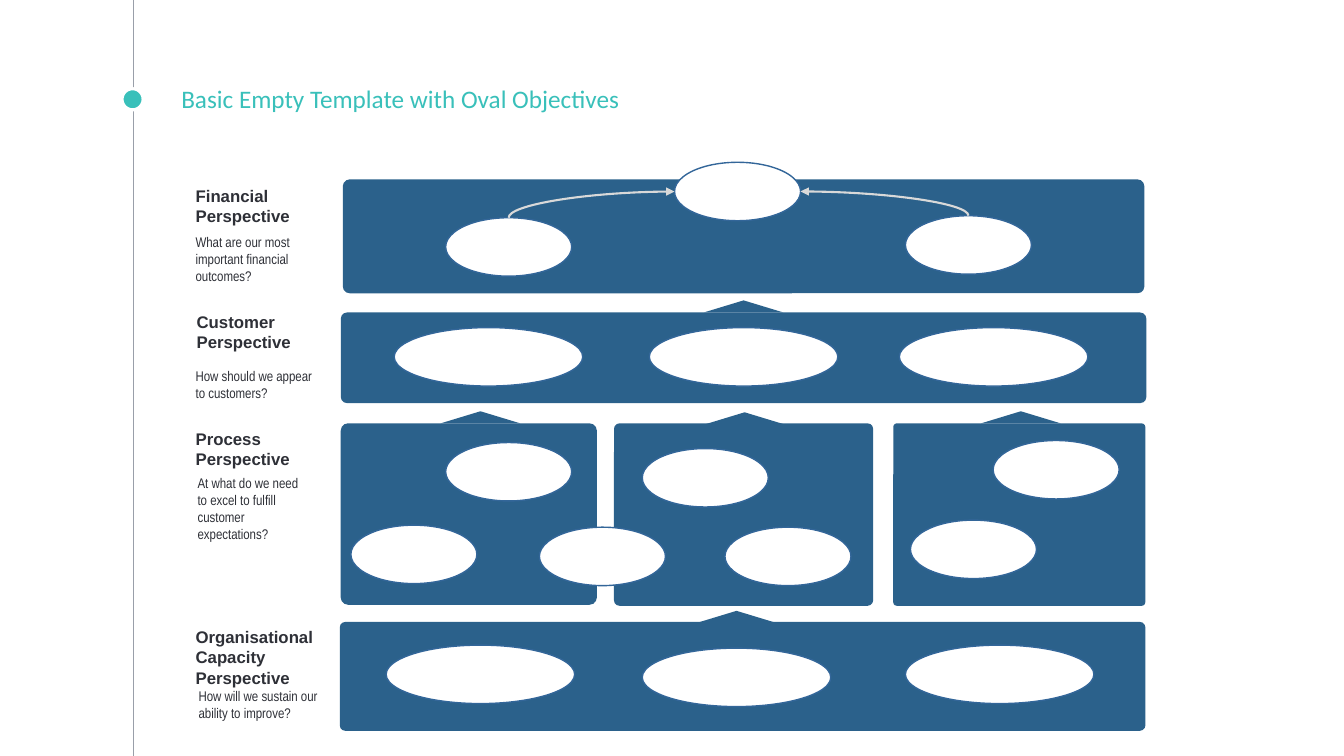
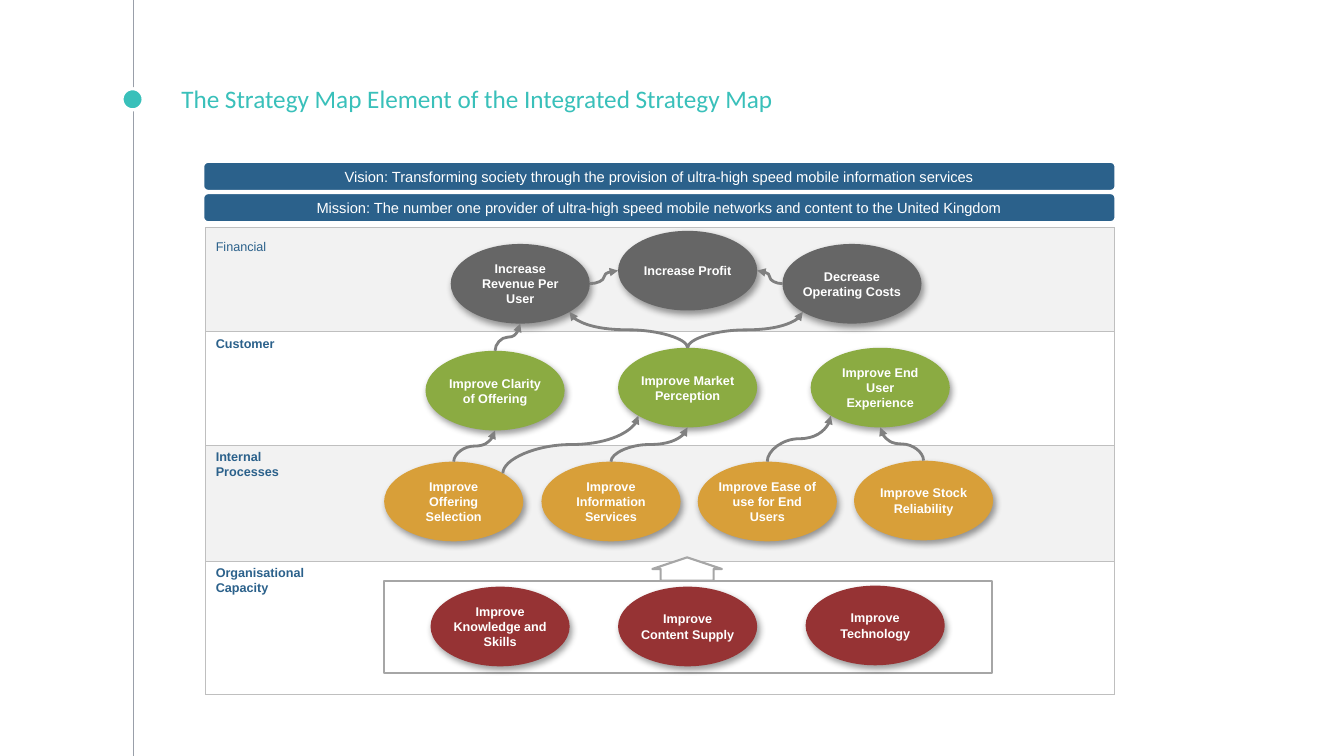
import math
from dataclasses import dataclass

from lxml import etree
from pptx import Presentation
from pptx import util as u
from pptx.dml.color import RGBColor
from pptx.enum import shapes, text
from pptx.oxml.ns import qn

Inches = u.Inches
PRESET = shapes.MSO_SHAPE
ALIGN = text.PP_ALIGN
ANCHOR = text.MSO_ANCHOR

# Connection sites of an oval, counted anticlockwise in steps of 45 degrees
TOP, LEFT, BOTTOM_LEFT, BOTTOM, BOTTOM_RIGHT, RIGHT, TOP_RIGHT = 0, 2, 3, 4, 5, 6, 7


@dataclass(frozen=True)
class Theme:
    accent: str = "39C0BA"
    rail: str = "999FA9"
    navy: str = "2B618B"
    oval_edge: str = "336699"
    ink: str = "2E3037"
    white: str = "FFFFFF"
    band: str = "F2F2F2"
    table_edge: str = "BFBFBF"
    frame: str = "A6A6A6"
    pale_arrow: str = "D9D9D9"
    arrow: str = "808080"
    shadow: str = "000000"
    financial: str = "666666"
    customer: str = "8BAB42"
    process: str = "D89F39"
    capacity: str = "963334"
    title_font: str = "Calibri"
    body_font: str = "Arial"
    narrow_font: str = "Arial Narrow"
    title_size: float = 18
    heading_size: float = 12
    banner_size: float = 10.5
    question_size: float = 10
    label_size: float = 9


THEME = Theme()


def rgb(color):
    return RGBColor.from_string(color)


def child(parent, tag, **attributes):
    return etree.SubElement(parent, qn(tag), **attributes)


def site_point(oval, site):
    """Position of a connection site on the edge of an oval."""
    angle = math.radians(45 * site)
    x = oval.left + oval.width / 2 * (1 - math.sin(angle))
    y = oval.top + oval.height / 2 * (1 - math.cos(angle))
    return round(x), round(y)


class SlideBuilder:
    def __init__(self, deck):
        self.deck = deck
        self.slide = None

    def new_slide(self, title):
        self.slide = self.deck.slides.add_slide(self.deck.slide_layouts[6])
        rail = self.slide.shapes.add_connector(
            shapes.MSO_CONNECTOR.STRAIGHT, Inches(1.32), 0, Inches(1.32), Inches(7.5))
        self.style_connector(rail, THEME.rail, 0.75)
        self.shape(PRESET.OVAL, (1.21, 0.88, 0.21, 0.21), THEME.accent, THEME.white, 2.25)
        self.text_box((1.7, 0.73, 10, 0.5), title, THEME.title_size, THEME.accent,
                      font=THEME.title_font, anchor=ANCHOR.BOTTOM, inset=0.1)

    def shape(self, preset, box, fill, edge=None, edge_width=1, adjustments=()):
        item = self.slide.shapes.add_shape(preset, *map(Inches, box))
        item.shadow.inherit = False
        item.fill.solid()
        item.fill.fore_color.rgb = rgb(fill)
        if edge:
            item.line.color.rgb = rgb(edge)
            item.line.width = u.Pt(edge_width)
        else:
            item.line.fill.background()
        for index, value in enumerate(adjustments):
            item.adjustments[index] = value
        return item

    def set_text(self, frame, words, size, color, font=THEME.body_font, bold=False,
                 align=ALIGN.LEFT):
        frame.word_wrap = True
        para = frame.paragraphs[0]
        para.text = words
        para.alignment = align
        para.font.name = font
        para.font.size = u.Pt(size)
        para.font.bold = bold
        para.font.color.rgb = rgb(color)

    def text_box(self, box, words, size, color, anchor=ANCHOR.TOP, inset=0.05, **style):
        frame = self.slide.shapes.add_textbox(*map(Inches, box)).text_frame
        frame.vertical_anchor = anchor
        self.set_insets(frame, inset)
        self.set_text(frame, words, size, color, **style)

    def set_insets(self, frame, inset):
        frame.margin_left = frame.margin_right = Inches(inset)
        frame.margin_top = frame.margin_bottom = Inches(inset)

    def panel(self, box, rounding):
        self.shape(PRESET.ROUNDED_RECTANGLE, box, THEME.navy, adjustments=[rounding])

    def pointer(self, left, top):
        self.shape(PRESET.ISOSCELES_TRIANGLE, (left, top, 0.79, 0.12), THEME.navy)

    def empty_oval(self, left, top, width=1.25):
        return self.shape(PRESET.OVAL, (left, top, width, 0.58), THEME.white, THEME.oval_edge)

    def banner(self, top, words):
        bar = self.shape(PRESET.ROUNDED_RECTANGLE, (2.02, top, 9.04, 0.28), THEME.navy,
                         THEME.white, adjustments=[0.15])
        bar.text_frame.vertical_anchor = ANCHOR.MIDDLE
        self.set_text(bar.text_frame, words, THEME.banner_size, THEME.white,
                      align=ALIGN.CENTER)

    def objective(self, left, top, words, fill):
        oval = self.shape(PRESET.OVAL, (left, top, 1.38, 0.79), fill)
        effects = oval._element.spPr.find(qn("a:effectLst"))
        shadow = child(effects, "a:outerShdw", blurRad=str(u.Pt(5)), dist=str(u.Pt(3)),
                       dir=str(60 * 60000), algn="tl", rotWithShape="0")
        color = child(shadow, "a:srgbClr", val=THEME.shadow)
        child(color, "a:alpha", val="40000")
        oval.text_frame.vertical_anchor = ANCHOR.MIDDLE
        self.set_insets(oval.text_frame, 0)
        self.set_text(oval.text_frame, words, THEME.label_size, THEME.white, bold=True,
                      align=ALIGN.CENTER)
        return oval

    def style_connector(self, connector, color, width, arrow=False):
        connector.line.color.rgb = rgb(color)
        connector.line.width = u.Pt(width)
        properties = connector._element.spPr
        if arrow:
            child(properties.find(qn("a:ln")), "a:tailEnd", type="triangle")
        child(properties, "a:effectLst")

    def curve(self, start, start_site, end, end_site, color, width, quarter=False):
        """Join two ovals; a curve that leaves sideways is not turned upward."""
        x1, y1 = site_point(start, start_site)
        x2, y2 = site_point(end, end_site)
        connector = self.slide.shapes.add_connector(
            shapes.MSO_CONNECTOR.CURVE, x1, y1, x2, y2)
        element = connector._element
        if start_site not in (LEFT, RIGHT):
            across, rise = abs(x2 - x1), abs(y2 - y1)
            connector.left = (x1 + x2 - rise) // 2
            connector.top = (y1 + y2 - across) // 2
            connector.width, connector.height = rise, across
            frame = element.spPr.find(qn("a:xfrm"))
            frame.set("rot", str(270 * 60000))
            frame.set("flipH", "0")
            frame.set("flipV", str(int(x2 < x1)))
        if quarter:
            element.spPr.find(qn("a:prstGeom")).set("prst", "curvedConnector2")
        joints = element.nvCxnSpPr.cNvCxnSpPr
        for tag, oval, site in (("a:stCxn", start, start_site), ("a:endCxn", end, end_site)):
            child(joints, tag, id=str(oval.shape_id), idx=str(site))
        self.style_connector(connector, color, width, arrow=True)

    def band_table(self, box, rows):
        """Rows are (height, label, fill, bold, top margin)."""
        table = self.slide.shapes.add_table(len(rows), 1, *map(Inches, box)).table
        table.first_row = table.horz_banding = False
        for index, (height, label, fill, bold, margin) in enumerate(rows):
            table.rows[index].height = Inches(height)
            cell = table.cell(index, 0)
            cell.margin_top = Inches(margin)
            properties = cell._tc.get_or_add_tcPr()
            for side in "LRTB":
                edge = child(properties, f"a:ln{side}", w=str(u.Pt(0.5)))
                child(child(edge, "a:solidFill"), "a:srgbClr", val=THEME.table_edge)
            cell.fill.solid()
            cell.fill.fore_color.rgb = rgb(fill)
            self.set_text(cell.text_frame, label, THEME.label_size, THEME.navy, bold=bold)


def build_empty_template(page):
    page.new_slide("Basic Empty Template with Oval Objectives")

    for left, top in ((9.73, 4.08), (6.99, 4.09), (4.37, 4.08), (6.98, 2.98), (6.91, 6.06)):
        page.pointer(left, top)
    for box, rounding in (
        ((3.4, 1.78, 7.95, 1.13), 0.06),
        ((3.38, 3.1, 7.99, 0.9), 0.07),
        ((3.38, 4.2, 2.54, 1.8), 0.04),
        ((6.09, 4.2, 2.57, 1.81), 0.03),
        ((8.86, 4.2, 2.5, 1.81), 0.02),
        ((3.37, 6.17, 7.99, 1.08), 0.05),
    ):
        page.panel(box, rounding)

    for heading_box, heading, question_box, question in (
        ((1.89, 1.79, 1.25, 0.5), "Financial Perspective",
         (1.89, 2.27, 1.43, 0.6), "What are our most important financial outcomes?"),
        ((1.9, 3.04, 1.19, 0.5), "Customer Perspective",
         (1.89, 3.6, 1.36, 0.43), "How should we appear to customers?"),
        ((1.89, 4.2, 1.24, 0.5), "Process Perspective",
         (1.91, 4.66, 1.16, 0.77),
         "At what do we need to excel to fulfill customer expectations?"),
        ((1.89, 6.17, 1.33, 0.7), "Organisational\nCapacity\nPerspective",
         (1.92, 6.77, 1.43, 0.43), "How will we sustain our ability to improve?"),
    ):
        page.text_box(heading_box, heading, THEME.heading_size, THEME.ink,
                      anchor=ANCHOR.MIDDLE, bold=True)
        page.text_box(question_box, question, THEME.question_size, THEME.ink,
                      font=THEME.narrow_font)

    goal = page.empty_oval(6.69, 1.61)
    left_driver = page.empty_oval(4.42, 2.16)
    right_driver = page.empty_oval(8.98, 2.14)
    for driver, goal_side in ((left_driver, LEFT), (right_driver, RIGHT)):
        page.curve(driver, TOP, goal, goal_side, THEME.pale_arrow, 1.5, quarter=True)

    process_ovals = ((4.42, 4.39), (3.48, 5.21), (5.35, 5.23), (6.37, 4.45),
                     (7.19, 5.23), (9.85, 4.37), (9.03, 5.16))
    for left, top in process_ovals:
        page.empty_oval(left, top)
    wide_ovals = ((3.91, 3.25), (6.44, 3.25), (8.92, 3.25),
                  (3.83, 6.4), (6.37, 6.43), (8.98, 6.4))
    for left, top in wide_ovals:
        page.empty_oval(left, top, width=1.87)


def build_strategy_map(page):
    page.new_slide("The Strategy Map Element of the Integrated Strategy Map")
    page.banner(1.61, "Vision: Transforming society through the provision of "
                      "ultra-high speed mobile information services")
    page.banner(1.92, "Mission: The number one provider of ultra-high speed mobile "
                      "networks and content to the United Kingdom")
    page.band_table((2.04, 2.26, 9.01, 4.63), (
        (1.03, "Financial", THEME.band, False, 0.12),
        (1.13, "Customer", THEME.white, True, 0.05),
        (1.15, "Internal\nProcesses", THEME.band, True, 0.05),
        (1.32, "Organisational\nCapacity", THEME.white, True, 0.05),
    ))
    page.shape(PRESET.RECTANGLE, (3.81, 5.76, 6.03, 0.92), THEME.white, THEME.frame, 1.5)
    page.shape(PRESET.UP_ARROW, (6.47, 5.53, 0.69, 0.23), THEME.white, THEME.frame, 1.5,
               adjustments=[0.76, 0.5])

    objectives = {
        name: page.objective(left, top, words, fill)
        for name, left, top, words, fill in (
            ("revenue", 4.47, 2.42, "Increase Revenue Per User", THEME.financial),
            ("profit", 6.13, 2.29, "Increase Profit", THEME.financial),
            ("costs", 7.76, 2.42, "Decrease Operating Costs", THEME.financial),
            ("clarity", 4.22, 3.48, "Improve Clarity of Offering", THEME.customer),
            ("perception", 6.13, 3.45, "Improve Market Perception", THEME.customer),
            ("experience", 8.04, 3.45, "Improve End User Experience", THEME.customer),
            ("selection", 3.81, 4.58, "Improve Offering Selection", THEME.process),
            ("information", 5.37, 4.58, "Improve Information Services", THEME.process),
            ("ease", 6.92, 4.58, "Improve Ease of use for End Users", THEME.process),
            ("reliability", 8.47, 4.57, "Improve Stock Reliability", THEME.process),
            ("skills", 4.27, 5.82, "Improve Knowledge and Skills", THEME.capacity),
            ("content", 6.13, 5.82, "Improve Content Supply", THEME.capacity),
            ("technology", 7.99, 5.81, "Improve Technology", THEME.capacity),
        )
    }
    for start, start_site, end, end_site in (
        ("revenue", RIGHT, "profit", LEFT),
        ("costs", LEFT, "profit", RIGHT),
        ("clarity", TOP, "revenue", BOTTOM),
        ("perception", TOP, "revenue", BOTTOM_RIGHT),
        ("perception", TOP, "costs", BOTTOM_LEFT),
        ("selection", TOP, "clarity", BOTTOM),
        ("selection", TOP_RIGHT, "perception", BOTTOM_LEFT),
        ("information", TOP, "perception", BOTTOM),
        ("ease", TOP, "experience", BOTTOM_LEFT),
        ("reliability", TOP, "experience", BOTTOM),
    ):
        page.curve(objectives[start], start_site, objectives[end], end_site, THEME.arrow, 2)


def main():
    deck = Presentation()
    deck.slide_width, deck.slide_height = Inches(13.33), Inches(7.5)
    page = SlideBuilder(deck)
    build_empty_template(page)
    build_strategy_map(page)
    deck.save("out.pptx")


if __name__ == "__main__":
    main()
